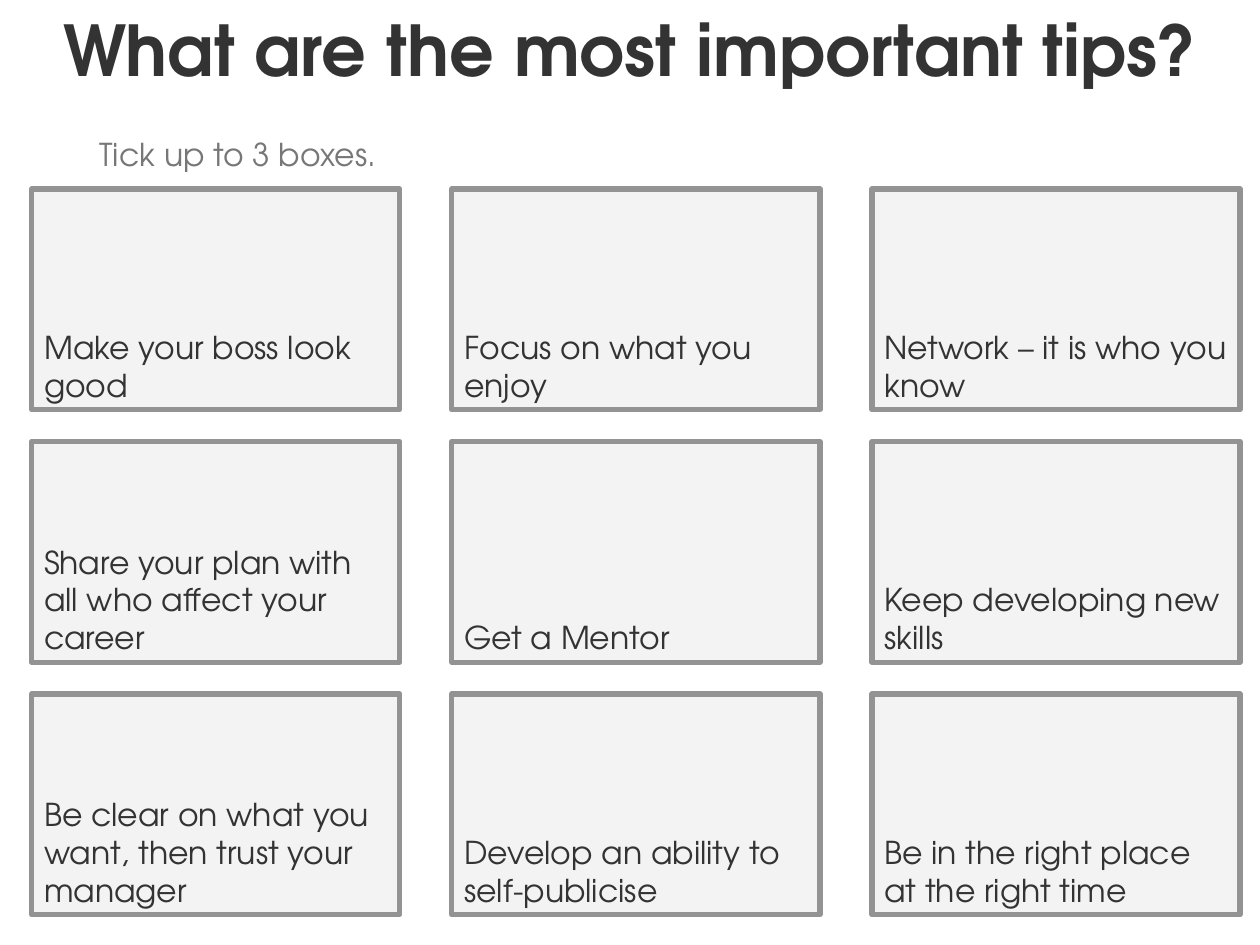
"""Build the career tips voting slide."""
import pptx
import pptx.dml.color
import pptx.enum.shapes
import pptx.enum.text
import pptx.util

Cm = pptx.util.Cm
Align = pptx.enum.text.PP_ALIGN
Anchor = pptx.enum.text.MSO_ANCHOR
Fit = pptx.enum.text.MSO_AUTO_SIZE

HEAD = "What are the most important tips?"
HINT = "Tick up to 3 boxes."
TIPS = [
    ["Make your boss look good", "Focus on what you enjoy", "Network – it is who you know"],
    ["Share your plan with all who affect your career", "Get a Mentor", "Keep developing new skills"],
    ["Be clear on what you want, then trust your manager", "Develop an ability to self-publicise",
     "Be in the right place at the right time"],
]
FONT = "TeX Gyre Adventor"
LEFT, TOP = 0.64, 3.81
WIDE, HIGH = 7.42, 4.45
STEP_X, STEP_Y = 8.47, 5.09


def paint(target, colour):
    """Give a fill or line format a solid colour."""
    target.solid()
    target.fore_color.rgb = pptx.dml.color.RGBColor.from_string(colour)


def write(shape, text, size, colour, anchor, align=Align.LEFT, bold=False):
    """Put one formatted paragraph into a shape."""
    frame = shape.text_frame
    frame.text = text
    frame.word_wrap = True
    frame.auto_size = Fit.NONE
    frame.vertical_anchor = anchor
    para = frame.paragraphs[0]
    para.alignment = align
    font = para.runs[0].font
    font.name, font.size, font.bold = FONT, pptx.util.Pt(size), bold
    paint(font.fill, colour)
    return para


def block(slide, left, top, wide, high, fill, edge=None):
    """Add a flat rectangle, with an outline if an edge colour is given."""
    shape = slide.shapes.add_shape(
        pptx.enum.shapes.MSO_SHAPE.RECTANGLE, Cm(left), Cm(top), Cm(wide), Cm(high))
    shape.shadow.inherit = False
    paint(shape.fill, fill)
    if edge:
        paint(shape.line.fill, edge)
        shape.line.width = pptx.util.Pt(3)
    else:
        shape.line.fill.background()
    return shape


def main():
    """Create and save the slide."""
    deck = pptx.Presentation()
    deck.slide_width, deck.slide_height = Cm(25.4), Cm(19.05)
    slide = deck.slides.add_slide(deck.slide_layouts[5])

    hint = slide.shapes.title
    hint.left, hint.top, hint.width, hint.height = Cm(1.75), Cm(2.49), Cm(21.9), Cm(1.32)
    write(hint, HINT, 18, "777777", Anchor.MIDDLE).line_spacing = 0.9

    head = block(slide, 0, 0, 25.4, 1.96, "FFFFFF")
    write(head, HEAD, 40, "333333", Anchor.TOP, Align.CENTER, True)

    for row, tips in enumerate(TIPS):
        for col, tip in enumerate(tips):
            box = block(slide, LEFT + col * STEP_X, TOP + row * STEP_Y,
                        WIDE, HIGH, "F3F3F3", "939393")
            write(box, tip, 18, "333333", Anchor.BOTTOM)

    deck.save("out.pptx")


if __name__ == "__main__":
    main()
